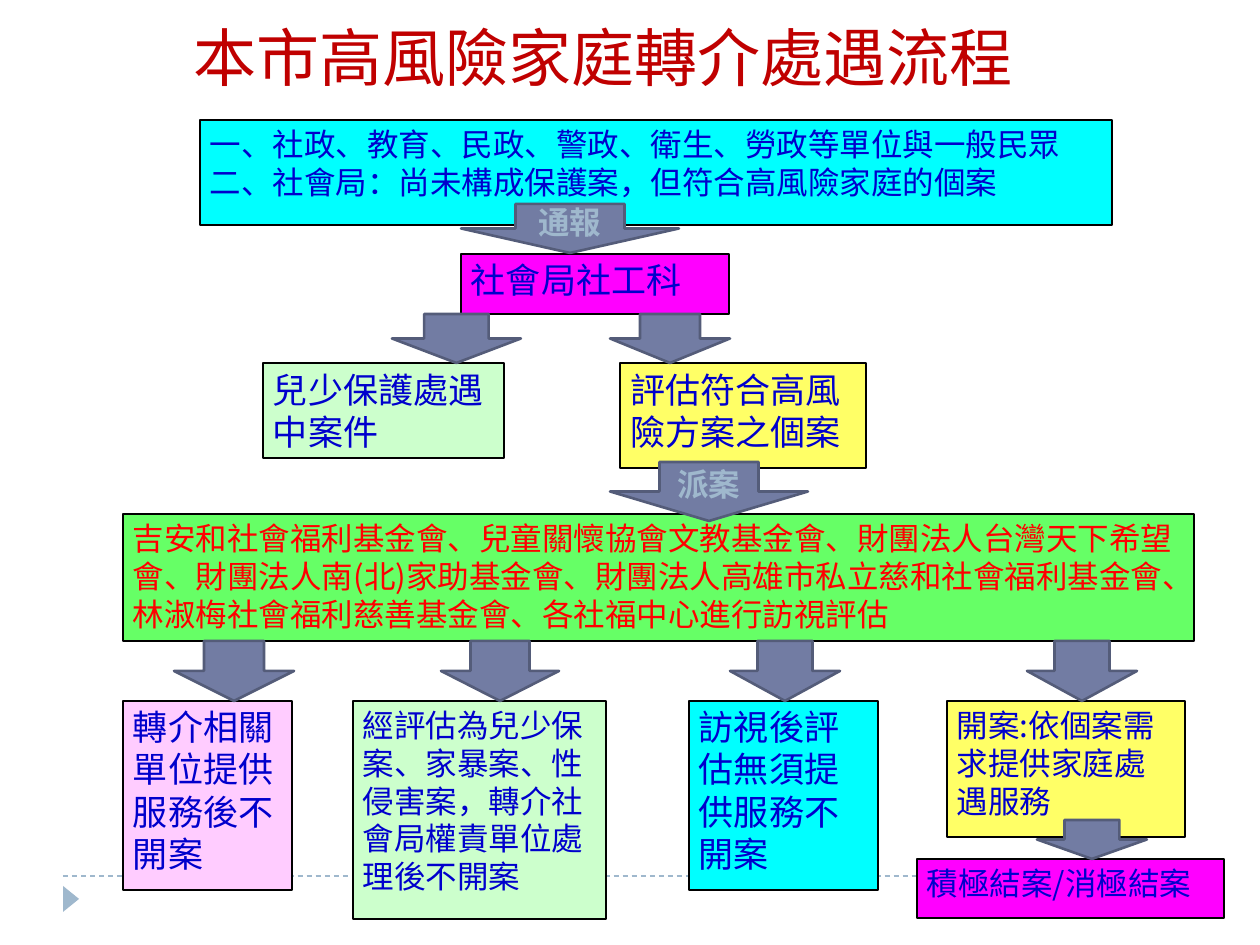
"""Build the referral and intervention flow chart for high-risk families."""
from dataclasses import dataclass

from lxml import etree
from pptx import Presentation
from pptx import util as u
from pptx.dml.color import RGBColor
from pptx.enum import dml, shapes, text
from pptx.oxml import ns

SCALE = 914400 // 126


@dataclass(frozen=True)
class Theme:
    cjk: str = "Noto Sans CJK SC"
    latin: str = "Arial"
    title_font: str = "Roboto Slab"
    label_font: str = "Calibri"
    title: str = "C00000"
    ink: str = "0000CC"
    alert: str = "FF0000"
    border: str = "000000"
    cyan: str = "00FFFF"
    green: str = "66FF66"
    mint: str = "CCFFCC"
    pink: str = "FFCCFF"
    yellow: str = "FFFF66"
    magenta: str = "FF00FF"
    arrow: str = "727CA3"
    arrow_edge: str = "545C79"
    pale: str = "9FB8CD"
    title_size: int = 36
    large: int = 20
    small: int = 18


T = Theme()
TITLE = "本市高風險家庭轉介處遇流程"
SOURCES = [
    [("一、社政、教育、民政、警政、衛生、勞政等單位", T.cjk), ("與一般民眾", T.latin)],
    [("二、社會局：尚未構成保護案，但符合高風險家庭的個案", T.cjk)],
]
AGENCIES = ("吉安和社會福利基金會、兒童關懷協會文教基金會、財團法人台灣天下希望會、"
            "財團法人南(北)家助基金會、財團法人高雄市私立慈和社會福利基金會、"
            "林淑梅社會福利慈善基金會、各社福中心進行訪視評估")
ASSESS_TOP, AGENCY_TOP, AGENCY_HEIGHT, RESULT_TOP = 363, 514, 127, 701
OFFICE_BOTTOM = 314
AGENCY_BOTTOM = AGENCY_TOP + AGENCY_HEIGHT

BOXES = [
    ((200, 120, 912, 105), T.cyan, T.ink, T.small, SOURCES),
    ((123, AGENCY_TOP, 1071, AGENCY_HEIGHT), T.green, T.alert, T.small, AGENCIES),
    ((123, RESULT_TOP, 169, 189), T.pink, T.ink, T.large, "轉介相關單位提供服務後不開案"),
    ((353, RESULT_TOP, 253, 218), T.mint, T.ink, T.small,
     "經評估為兒少保案、家暴案、性侵害案，轉介社會局權責單位處理後不開案"),
    ((947, RESULT_TOP, 238, 136), T.yellow, T.ink, T.small, "開案:依個案需求提供家庭處遇服務"),
    ((689, RESULT_TOP, 189, 189), T.cyan, T.ink, T.large, "訪視後評估無須提供服務不開案"),
    ((461, 254, 268, 60), T.magenta, T.ink, T.large, "社會局社工科"),
    ((263, ASSESS_TOP, 241, 95), T.mint, T.ink, T.large, "兒少保護處遇中案件"),
    ((620, ASSESS_TOP, 246, 105), T.yellow, T.ink, T.large, "評估符合高風險方案之個案"),
    ((917, 859, 307, 59), T.magenta, T.ink, T.small, "積極結案/消極結案"),
]
ARROWS = [((610, 462, 198, 59), "派案"), ((461, 204, 218, 49), "通報"), ((1037, 820, 110, 39), "")]
ARROWS += [((left, OFFICE_BOTTOM, width, ASSESS_TOP - OFFICE_BOTTOM), "")
           for left, width in [(610, 120), (392, 129)]]
ARROWS += [((left, AGENCY_BOTTOM, width, RESULT_TOP - AGENCY_BOTTOM), "")
           for left, width in [(174, 120), (441, 118), (730, 110), (1027, 110)]]


def px(*lengths):
    return [u.Emu(length * SCALE) for length in lengths]


def rgb(code):
    return RGBColor.from_string(code)


def apply(target, formats):
    for name, value in formats.items():
        setattr(target, name, value)


def write(box, paragraphs, size, color, bold=False, align=text.PP_ALIGN.LEFT, **frame_formats):
    frame = box.text_frame
    apply(frame, {"word_wrap": True, **frame_formats})
    for index, spans in enumerate(paragraphs):
        para = frame.add_paragraph() if index else frame.paragraphs[0]
        apply(para, {"alignment": align, "line_spacing": u.Pt(size * 1.2),
                     "space_before": u.Pt(0), "space_after": u.Pt(0)})
        for words, font in spans:
            span = para.add_run()
            span.text = words
            apply(span.font, {"name": font, "size": u.Pt(size), "bold": bold})
            span.font.color.rgb = rgb(color)
            latin = span.font._element.find(ns.qn("a:latin"))
            east_asian = etree.Element(ns.qn("a:ea"), typeface=T.cjk)
            latin.addnext(east_asian)


def add_block(page, kind, place, fill, edge=None, weight=0.75):
    box = page.shapes.add_shape(kind, *px(*place))
    box.shadow.inherit = False
    box.fill.solid()
    box.fill.fore_color.rgb = rgb(fill)
    if edge:
        box.line.color.rgb = rgb(edge)
        box.line.width = u.Pt(weight)
    else:
        box.line.fill.background()
    return box


def add_footer(page):
    rule = page.shapes.add_connector(shapes.MSO_CONNECTOR.STRAIGHT, *px(63, 876, 1197, 876))
    rule.line.color.rgb = rgb(T.pale)
    apply(rule.line, {"width": u.Pt(0.75), "dash_style": dml.MSO_LINE.DASH})
    etree.SubElement(rule._element.spPr, ns.qn("a:effectLst"))
    marker = add_block(page, shapes.MSO_SHAPE.ISOSCELES_TRIANGLE, (58, 891, 26, 16), T.pale)
    marker.rotation = 90


def main():
    deck = Presentation()
    apply(deck, {"slide_width": u.Inches(10), "slide_height": u.Inches(7.5)})
    page = deck.slides.add_slide(deck.slide_layouts[5])
    add_footer(page)

    title = page.shapes.title
    apply(title, dict(zip(("left", "top", "width", "height"), px(181, 0, 878, 100))))
    write(title, [[(TITLE, T.title_font)]], T.title_size, T.title,
          vertical_anchor=text.MSO_ANCHOR.BOTTOM, auto_size=text.MSO_AUTO_SIZE.NONE)

    side, edge = px(10, 5)
    margins = {"margin_left": side, "margin_right": side, "margin_top": edge, "margin_bottom": edge}
    for place, fill, color, size, content in BOXES:
        box = add_block(page, shapes.MSO_SHAPE.RECTANGLE, place, fill, T.border)
        paragraphs = [[(content, T.cjk)]] if isinstance(content, str) else content
        write(box, paragraphs, size, color, vertical_anchor=text.MSO_ANCHOR.TOP, **margins)

    for place, label in ARROWS:
        arrow = add_block(page, shapes.MSO_SHAPE.DOWN_ARROW, place, T.arrow, T.arrow_edge, 1.5)
        if label:
            write(arrow, [[(label, T.label_font)]], T.small, T.pale, True,
                  text.PP_ALIGN.CENTER, vertical_anchor=text.MSO_ANCHOR.MIDDLE)

    deck.save("out.pptx")


if __name__ == "__main__":
    main()
